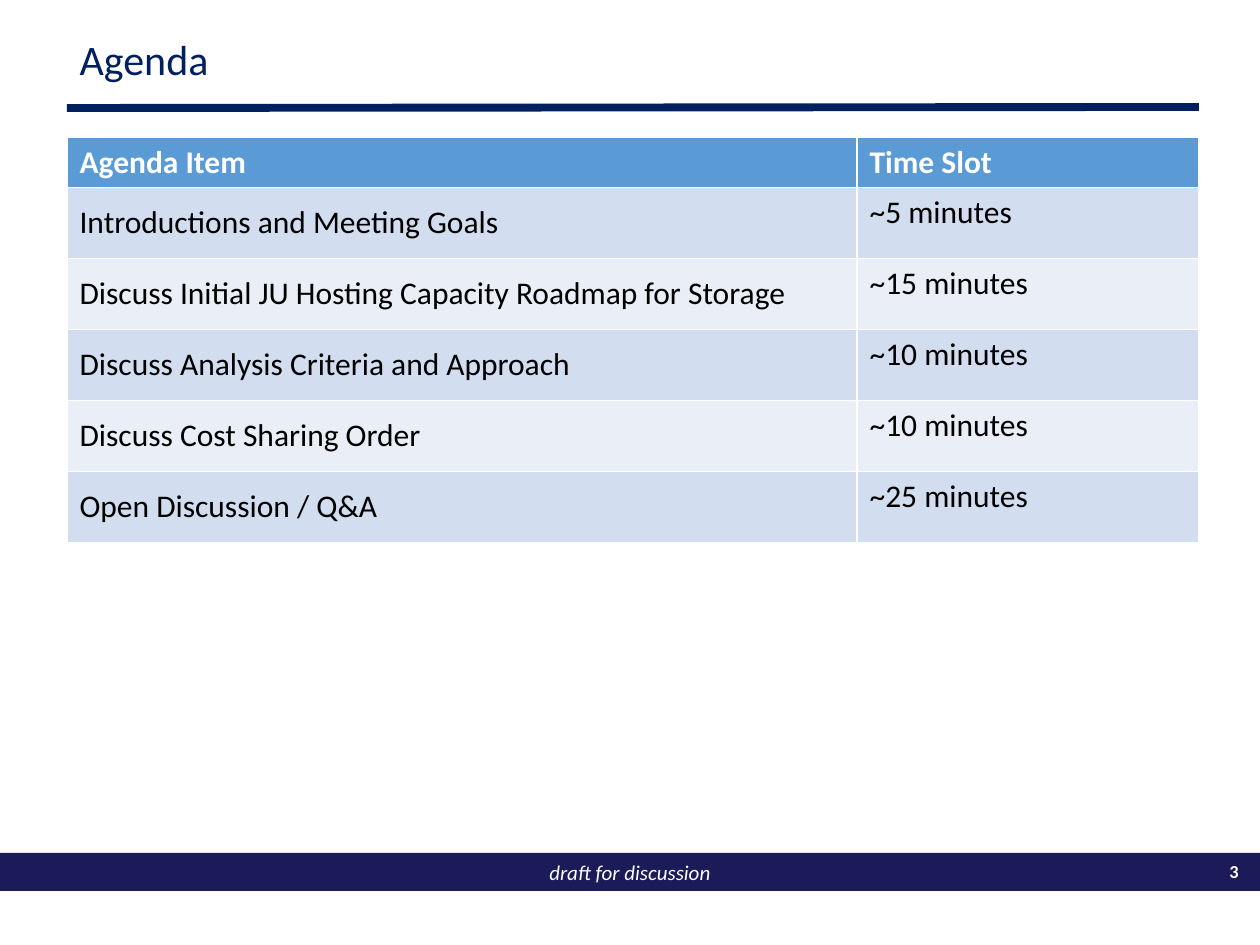
import pptx
import pptx.util
import pptx.dml.color
import pptx.enum.shapes
import pptx.enum.text
import pptx.oxml.ns
import lxml.etree

PX = 914400 // 126
NAVY, BAND_NAVY, WHITE, BLACK = "002060", "1B1B59", "FFFFFF", "000000"
HEADER_FILL, ROW_FILLS = "5B9BD5", ("D2DEEF", "EAEFF7")
ALIGN, ANCHOR = pptx.enum.text.PP_ALIGN, pptx.enum.text.MSO_ANCHOR

TITLE = "Agenda"
FOOTER = "draft for discussion"
PAGE_NUMBER = "3"
HEADINGS = ("Agenda Item", "Time Slot")
ITEMS = [
    ("Introductions and Meeting Goals", "~5 minutes"),
    ("Discuss Initial JU Hosting Capacity Roadmap for Storage", "~15 minutes"),
    ("Discuss Analysis Criteria and Approach", "~10 minutes"),
    ("Discuss Cost Sharing Order", "~10 minutes"),
    ("Open Discussion / Q&A", "~25 minutes"),
]
LEFT, WIDTH = 67, 1132
COLUMN_WIDTHS = (790, WIDTH - 790)
HEADER_HEIGHT, ROW_HEIGHT = 38, 71


def px(*lengths):
    return [pptx.util.Emu(length * PX) for length in lengths]


def rgb(value):
    return pptx.dml.color.RGBColor.from_string(value)


def write(frame, text, size, color, bold=False, italic=False,
          align=ALIGN.LEFT, anchor=ANCHOR.TOP):
    frame.vertical_anchor = anchor
    para = frame.paragraphs[0]
    para.alignment = align
    span = para.add_run()
    span.text = text
    font = span.font
    font.name, font.size, font.color.rgb = "Calibri", pptx.util.Pt(size), rgb(color)
    font.bold, font.italic = bold, italic
    return para


def add_footer(page):
    band = page.shapes.add_shape(
        pptx.enum.shapes.MSO_SHAPE.RECTANGLE, *px(0, 853, 1260, 38))
    band.shadow.inherit = False
    band.fill.solid()
    band.fill.fore_color.rgb = rgb(BAND_NAVY)
    band.line.fill.background()
    write(band.text_frame, FOOTER, 12, WHITE, italic=True,
          align=ALIGN.CENTER, anchor=ANCHOR.MIDDLE)
    number = page.shapes.add_textbox(*px(1200, 854, 51, 36))
    number.text_frame.word_wrap = True
    write(number.text_frame, PAGE_NUMBER, 10.5, WHITE, bold=True, align=ALIGN.RIGHT)


def add_heading(page):
    rule = page.shapes.add_connector(
        pptx.enum.shapes.MSO_CONNECTOR.STRAIGHT, *px(LEFT, 108, LEFT + WIDTH, 107))
    rule.line.color.rgb = rgb(NAVY)
    rule.line.width = pptx.util.Pt(4.5)
    lxml.etree.SubElement(rule._element.spPr, pptx.oxml.ns.qn("a:effectLst"))
    title = page.shapes.title
    title.left, title.top, title.width, title.height = px(LEFT, 33, WIDTH, 57)
    para = write(title.text_frame, TITLE, 24, NAVY, anchor=ANCHOR.MIDDLE)
    para.line_spacing = 0.9


def add_agenda(page):
    """Add the table; its default style supplies the white borders."""
    rows = [HEADINGS, *ITEMS]
    height = HEADER_HEIGHT + ROW_HEIGHT * len(ITEMS)
    table = page.shapes.add_table(
        len(rows), len(HEADINGS), *px(LEFT, 137, WIDTH, height)).table
    for column, width in zip(table.columns, px(*COLUMN_WIDTHS)):
        column.width = width
    for r, texts in enumerate(rows):
        header = r == 0
        table.rows[r].height = px(HEADER_HEIGHT if header else ROW_HEIGHT)[0]
        for c, text in enumerate(texts):
            cell = table.cell(r, c)
            cell.fill.solid()
            cell.fill.fore_color.rgb = rgb(HEADER_FILL if header else ROW_FILLS[(r - 1) % 2])
            write(cell.text_frame, text, 18, WHITE if header else BLACK, bold=header)
            centred = c == 0 and not header
            cell.vertical_anchor = ANCHOR.MIDDLE if centred else ANCHOR.TOP


def main():
    deck = pptx.Presentation()
    deck.slide_width, deck.slide_height = px(1260, 945)
    page = deck.slides.add_slide(deck.slide_layouts.get_by_name("Title Only"))
    add_footer(page)
    add_heading(page)
    add_agenda(page)
    deck.save("out.pptx")


if __name__ == "__main__":
    main()
